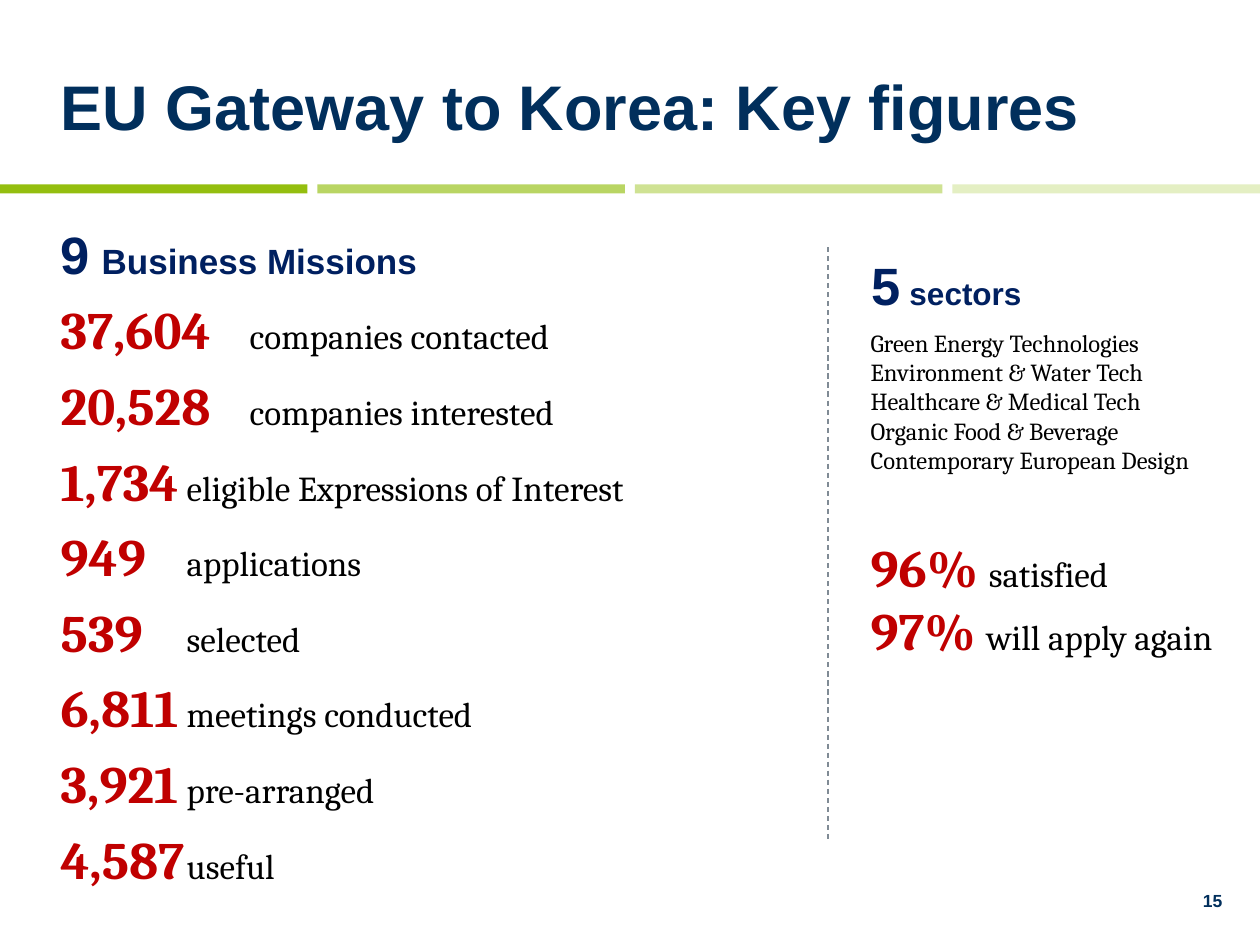
from dataclasses import dataclass

from lxml.etree import SubElement
from pptx import Presentation
from pptx.dml.color import RGBColor
from pptx.enum.dml import MSO_LINE_DASH_STYLE as Dash
from pptx.enum.shapes import MSO_CONNECTOR as Connector, MSO_SHAPE as Preset
from pptx.enum.text import MSO_ANCHOR as Anchor, MSO_AUTO_SIZE as AutoSize, PP_ALIGN as Align
from pptx.oxml.ns import qn
from pptx.util import Cm, Pt


@dataclass(frozen=True)
class Theme:
    heading_font: str = "Arial"
    text_font: str = "Cambria"
    title: str = "012F5C"
    heading: str = "002060"
    figure: str = "C00000"
    text: str = "000000"
    divider: str = "808B95"
    bands: tuple = ("94BE0F", "B9D563", "CFE293", "E4EFC3")
    title_size: int = 36
    figure_size: int = 30
    gap_size: int = 24
    wide_gap_size: int = 28
    label_size: int = 20
    sector_heading_size: int = 18
    sector_size: int = 14
    number_size: int = 10


@dataclass(frozen=True)
class Box:
    left: float
    top: float
    width: float
    height: float

    def lengths(self) -> tuple:
        return Cm(self.left), Cm(self.top), Cm(self.width), Cm(self.height)


@dataclass(frozen=True)
class Figure:
    value: str
    label: str
    label_at: float = 0


THEME = Theme()
FUNNEL = (
    Figure("37,604", "companies contacted", 3.58),
    Figure("20,528", "companies interested", 3.58),
    Figure("1,734", "eligible Expressions of Interest", 3.86),
    Figure("949", "applications", 3.95),
    Figure("539", "selected", 3.88),
    Figure("6,811", "meetings conducted", 3.86),
    Figure("3,921", "pre-arranged", 3.86),
    Figure("4,587", "useful", 4.0),
)
FEEDBACK = (Figure("96%", "satisfied"), Figure("97%", "will apply again"))
SECTORS = (
    "Green Energy Technologies Environment & Water Tech",
    "Healthcare & Medical Tech",
    "Organic Food & Beverage",
    "Contemporary European Design",
)


def add_text(paragraph, text: str, *, size: int, color: str = THEME.text,
             font: str = THEME.text_font, bold: bool = False) -> None:
    run = paragraph.add_run()
    run.text = text
    run.font.size = Pt(size)
    run.font.name = font
    run.font.bold = bold
    run.font.color.rgb = RGBColor.from_string(color)


def prepare_frame(shape, anchor=Anchor.TOP):
    frame = shape.text_frame
    frame.word_wrap = True
    frame.auto_size = AutoSize.NONE
    frame.vertical_anchor = anchor
    return frame


def add_frame(slide, box: Box, anchor=Anchor.TOP):
    return prepare_frame(slide.shapes.add_textbox(*box.lengths()), anchor)


def place(placeholder, box: Box, anchor=Anchor.TOP):
    placeholder.left, placeholder.top, placeholder.width, placeholder.height = box.lengths()
    return prepare_frame(placeholder, anchor)


def paragraph_at(frame, index: int):
    return frame.paragraphs[0] if index == 0 else frame.add_paragraph()


def format_row(paragraph, label_at: float = 0) -> None:
    properties = paragraph._p.get_or_add_pPr()
    properties.set("marL", "0")
    properties.set("indent", "0")
    SubElement(properties, qn("a:buNone"))
    if label_at:
        tabs = SubElement(properties, qn("a:tabLst"))
        SubElement(tabs, qn("a:tab"), pos=str(int(Cm(label_at))), algn="l")
    paragraph.line_spacing = 1.2
    paragraph.space_before = Pt(0)


def add_figure(paragraph, figure: Figure, gap: str, gap_size: int) -> None:
    add_text(paragraph, figure.value, size=THEME.figure_size, color=THEME.figure, bold=True)
    add_text(paragraph, gap, size=gap_size)
    add_text(paragraph, figure.label, size=THEME.label_size)


def add_heading(paragraph, count: str, gap_size: int, label: str, label_size: int) -> None:
    style = dict(color=THEME.heading, font=THEME.heading_font)
    add_text(paragraph, count, size=THEME.figure_size, bold=True, **style)
    add_text(paragraph, " ", size=gap_size, **style)
    add_text(paragraph, label, size=label_size, bold=True, **style)


def add_bands(slide) -> None:
    for index, color in enumerate(THEME.bands):
        box = Box(index * 6.4, 3.72, 6.2, 0.18)
        band = slide.shapes.add_shape(Preset.RECTANGLE, *box.lengths())
        band.shadow.inherit = False
        band.fill.solid()
        band.fill.fore_color.rgb = RGBColor.from_string(color)
        band.line.fill.background()


def add_divider(slide) -> None:
    divider = slide.shapes.add_connector(Connector.STRAIGHT, Cm(16.69), Cm(4.98), Cm(16.69), Cm(16.92))
    divider.line.color.rgb = RGBColor.from_string(THEME.divider)
    divider.line.width = Pt(0.75)
    divider.line.dash_style = Dash.DASH
    SubElement(divider._element.spPr, qn("a:effectLst"))


def add_missions(placeholder) -> None:
    frame = place(placeholder, Box(0.97, 4.09, 18, 14.25))
    heading = frame.paragraphs[0]
    format_row(heading)
    add_heading(heading, "9", THEME.gap_size, "Business Missions", THEME.label_size)
    for figure in FUNNEL:
        row = frame.add_paragraph()
        format_row(row, figure.label_at)
        add_figure(row, figure, "\t", THEME.gap_size)


def add_sectors(slide) -> None:
    heading = add_frame(slide, Box(17.32, 4.98, 3.78, 1.55)).paragraphs[0]
    add_heading(heading, "5", THEME.sector_heading_size, "sectors", THEME.sector_heading_size)
    frame = add_frame(slide, Box(17.3, 6.48, 7.8, 3.25))
    for index, sector in enumerate(SECTORS):
        add_text(paragraph_at(frame, index), sector, size=THEME.sector_size)


def add_feedback(slide) -> None:
    frame = add_frame(slide, Box(17.3, 10.67, 7.87, 2.82))
    for index, figure in enumerate(FEEDBACK):
        add_figure(paragraph_at(frame, index), figure, " ", THEME.wide_gap_size)


def main() -> None:
    deck = Presentation()
    deck.slide_width, deck.slide_height = Cm(25.4), Cm(19.05)
    slide = deck.slides.add_slide(deck.slide_layouts[1])
    title_style = dict(color=THEME.title, font=THEME.heading_font, bold=True)

    title = place(slide.shapes.title, Box(0.97, 0.53, 23.75, 3.18), Anchor.MIDDLE).paragraphs[0]
    title.alignment = Align.LEFT
    add_text(title, "EU Gateway to Korea: Key figures", size=THEME.title_size, **title_style)

    add_bands(slide)
    add_missions(slide.placeholders[1])
    add_sectors(slide)
    add_feedback(slide)
    add_divider(slide)

    page_number = add_frame(slide, Box(18.97, 17.65, 5.92, 1.02), Anchor.MIDDLE).paragraphs[0]
    page_number.alignment = Align.RIGHT
    add_text(page_number, "15", size=THEME.number_size, **title_style)

    deck.save("out.pptx")


if __name__ == "__main__":
    main()
